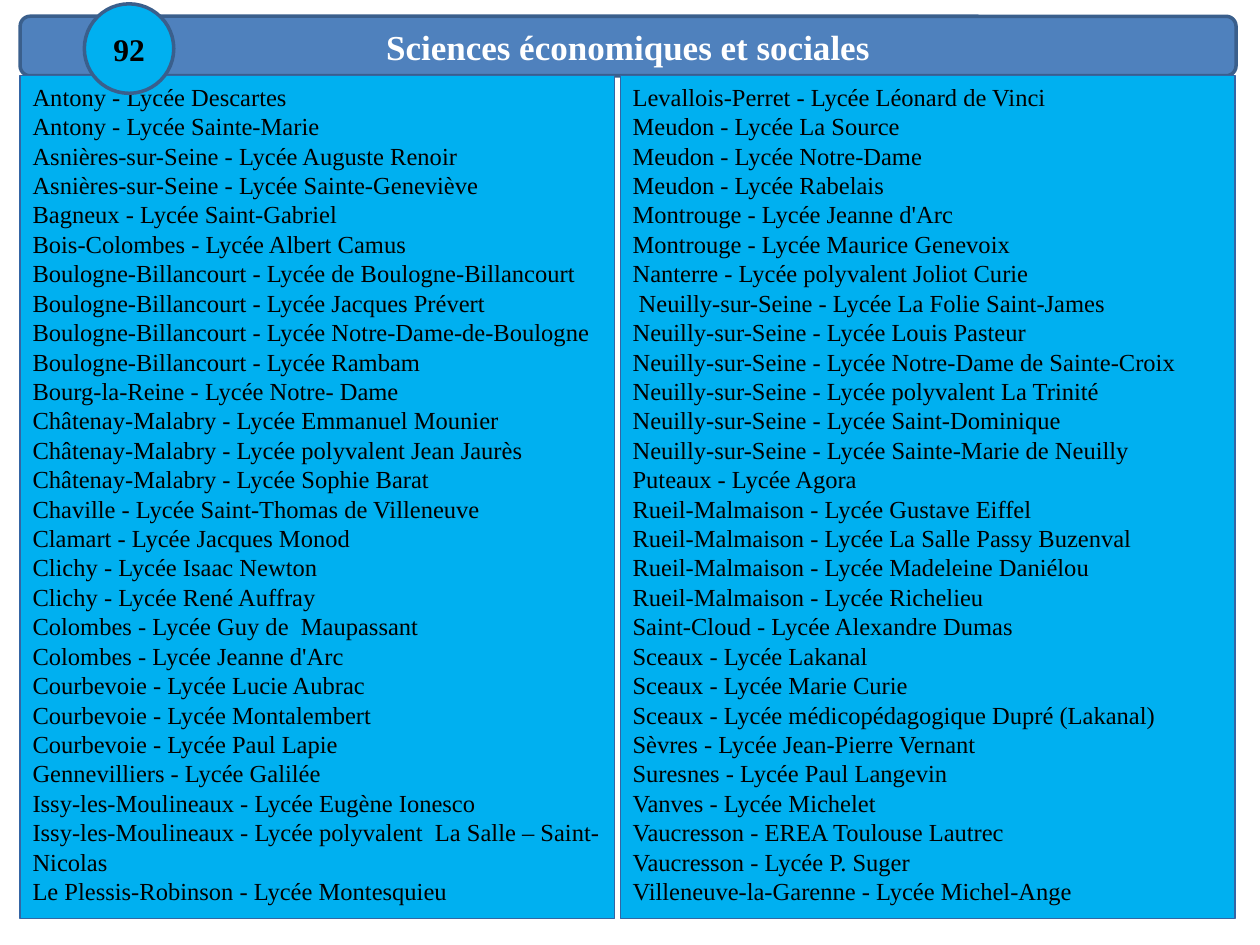
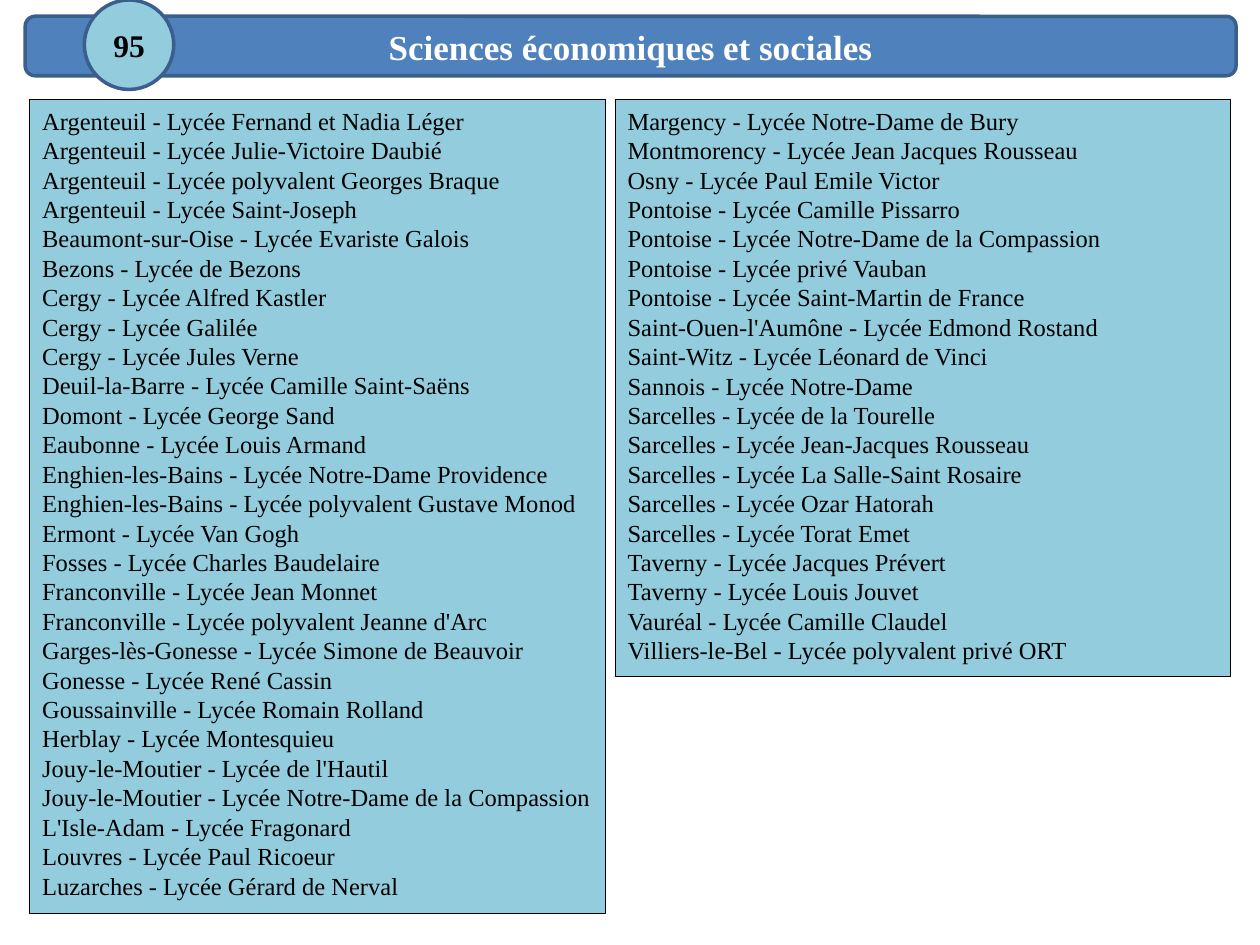
import pptx
import pptx.util
import pptx.dml.color
import pptx.enum.shapes
import pptx.enum.text
from dataclasses import dataclass

Pt = pptx.util.Pt
SHAPES = pptx.enum.shapes.MSO_SHAPE
ALIGN = pptx.enum.text.PP_ALIGN
ANCHOR = pptx.enum.text.MSO_ANCHOR


@dataclass(frozen=True)
class Theme:
    font: str = "Times New Roman"
    title_size: int = 20
    badge_size: int = 18
    list_size: int = 14
    white: str = "FFFFFF"
    black: str = "000000"
    band: str = "4F81BD"
    band_line: str = "3A5F8C"
    bright_blue: str = "00B0F0"
    bright_line: str = "3465A4"
    pale_blue: str = "93CDDD"


theme = Theme()
color = pptx.dml.color.RGBColor.from_string


def add_box(slide, kind, bounds, fill, line, line_width):
    shape = slide.shapes.add_shape(kind, *[Pt(length) for length in bounds])
    shape.shadow.inherit = False
    shape.fill.solid()
    shape.fill.fore_color.rgb = color(fill)
    shape.line.color.rgb = color(line)
    shape.line.width = Pt(line_width)
    return shape


def write_text(shape, lines, size, ink=theme.black, bold=False,
               align=ALIGN.CENTER, anchor=ANCHOR.MIDDLE):
    frame = shape.text_frame
    frame.word_wrap = True
    frame.vertical_anchor = anchor
    frame.text = "\n".join(lines)
    for paragraph in frame.paragraphs:
        paragraph.alignment = align
        paragraph.font.name = theme.font
        paragraph.font.size = Pt(size)
        paragraph.font.bold = bold
        paragraph.font.color.rgb = color(ink)


# Schools of each department, left and right columns
schools_92_left = [
    "Antony - Lycée Descartes",
    "Antony - Lycée Sainte-Marie",
    "Asnières-sur-Seine - Lycée Auguste Renoir",
    "Asnières-sur-Seine - Lycée Sainte-Geneviève",
    "Bagneux - Lycée Saint-Gabriel",
    "Bois-Colombes - Lycée Albert Camus",
    "Boulogne-Billancourt - Lycée de Boulogne-Billancourt",
    "Boulogne-Billancourt - Lycée Jacques Prévert",
    "Boulogne-Billancourt - Lycée Notre-Dame-de-Boulogne",
    "Boulogne-Billancourt - Lycée Rambam",
    "Bourg-la-Reine - Lycée Notre- Dame",
    "Châtenay-Malabry - Lycée Emmanuel Mounier",
    "Châtenay-Malabry - Lycée polyvalent Jean Jaurès",
    "Châtenay-Malabry - Lycée Sophie Barat",
    "Chaville - Lycée Saint-Thomas de Villeneuve",
    "Clamart - Lycée Jacques Monod",
    "Clichy - Lycée Isaac Newton",
    "Clichy - Lycée René Auffray",
    "Colombes - Lycée Guy de  Maupassant",
    "Colombes - Lycée Jeanne d'Arc",
    "Courbevoie - Lycée Lucie Aubrac",
    "Courbevoie - Lycée Montalembert",
    "Courbevoie - Lycée Paul Lapie",
    "Gennevilliers - Lycée Galilée",
    "Issy-les-Moulineaux - Lycée Eugène Ionesco",
    "Issy-les-Moulineaux - Lycée polyvalent  La Salle – Saint-Nicolas",
    "Le Plessis-Robinson - Lycée Montesquieu",
]

schools_92_right = [
    "Levallois-Perret - Lycée Léonard de Vinci",
    "Meudon - Lycée La Source",
    "Meudon - Lycée Notre-Dame",
    "Meudon - Lycée Rabelais",
    "Montrouge - Lycée Jeanne d'Arc",
    "Montrouge - Lycée Maurice Genevoix",
    "Nanterre - Lycée polyvalent Joliot Curie",
    " Neuilly-sur-Seine - Lycée La Folie Saint-James",
    "Neuilly-sur-Seine - Lycée Louis Pasteur",
    "Neuilly-sur-Seine - Lycée Notre-Dame de Sainte-Croix",
    "Neuilly-sur-Seine - Lycée polyvalent La Trinité",
    "Neuilly-sur-Seine - Lycée Saint-Dominique",
    "Neuilly-sur-Seine - Lycée Sainte-Marie de Neuilly",
    "Puteaux - Lycée Agora",
    "Rueil-Malmaison - Lycée Gustave Eiffel",
    "Rueil-Malmaison - Lycée La Salle Passy Buzenval",
    "Rueil-Malmaison - Lycée Madeleine Daniélou",
    "Rueil-Malmaison - Lycée Richelieu",
    "Saint-Cloud - Lycée Alexandre Dumas",
    "Sceaux - Lycée Lakanal",
    "Sceaux - Lycée Marie Curie",
    "Sceaux - Lycée médicopédagogique Dupré (Lakanal)",
    "Sèvres - Lycée Jean-Pierre Vernant",
    "Suresnes - Lycée Paul Langevin",
    "Vanves - Lycée Michelet",
    "Vaucresson - EREA Toulouse Lautrec",
    "Vaucresson - Lycée P. Suger",
    "Villeneuve-la-Garenne - Lycée Michel-Ange",
]

schools_95_left = [
    "Argenteuil - Lycée Fernand et Nadia Léger",
    "Argenteuil - Lycée Julie-Victoire Daubié",
    "Argenteuil - Lycée polyvalent Georges Braque",
    "Argenteuil - Lycée Saint-Joseph",
    "Beaumont-sur-Oise - Lycée Evariste Galois",
    "Bezons - Lycée de Bezons",
    "Cergy - Lycée Alfred Kastler",
    "Cergy - Lycée Galilée",
    "Cergy - Lycée Jules Verne",
    "Deuil-la-Barre - Lycée Camille Saint-Saëns",
    "Domont - Lycée George Sand",
    "Eaubonne - Lycée Louis Armand",
    "Enghien-les-Bains - Lycée Notre-Dame Providence",
    "Enghien-les-Bains - Lycée polyvalent Gustave Monod",
    "Ermont - Lycée Van Gogh",
    "Fosses - Lycée Charles Baudelaire",
    "Franconville - Lycée Jean Monnet",
    "Franconville - Lycée polyvalent Jeanne d'Arc",
    "Garges-lès-Gonesse - Lycée Simone de Beauvoir",
    "Gonesse - Lycée René Cassin",
    "Goussainville - Lycée Romain Rolland",
    "Herblay - Lycée Montesquieu",
    "Jouy-le-Moutier - Lycée de l'Hautil",
    "Jouy-le-Moutier - Lycée Notre-Dame de la Compassion",
    "L'Isle-Adam - Lycée Fragonard",
    "Louvres - Lycée Paul Ricoeur",
    "Luzarches - Lycée Gérard de Nerval",
]

schools_95_right = [
    "Margency - Lycée Notre-Dame de Bury",
    "Montmorency - Lycée Jean Jacques Rousseau",
    "Osny - Lycée Paul Emile Victor",
    "Pontoise - Lycée Camille Pissarro",
    "Pontoise - Lycée Notre-Dame de la Compassion",
    "Pontoise - Lycée privé Vauban",
    "Pontoise - Lycée Saint-Martin de France",
    "Saint-Ouen-l'Aumône - Lycée Edmond Rostand",
    "Saint-Witz - Lycée Léonard de Vinci",
    "Sannois - Lycée Notre-Dame",
    "Sarcelles - Lycée de la Tourelle",
    "Sarcelles - Lycée Jean-Jacques Rousseau",
    "Sarcelles - Lycée La Salle-Saint Rosaire",
    "Sarcelles - Lycée Ozar Hatorah",
    "Sarcelles - Lycée Torat Emet",
    "Taverny - Lycée Jacques Prévert",
    "Taverny - Lycée Louis Jouvet",
    "Vauréal - Lycée Camille Claudel",
    "Villiers-le-Bel - Lycée polyvalent privé ORT",
]

# Each department: colours, positions, and columns as (bounds, schools)
departments = [
    dict(number="92", fill=theme.bright_blue, line=theme.bright_line, line_width=0.75,
         band_left=11.5, badge_top=2.2,
         columns=[((11.5, 43.2, 339.8, 481.7), schools_92_left),
                  ((354.4, 43.2, 351.4, 481.7), schools_92_right)]),
    dict(number="95", fill=theme.pale_blue, line=theme.black, line_width=0.25,
         band_left=14.4, badge_top=0,
         columns=[((17, 56.9, 329, 465), schools_95_left),
                  ((351.5, 56.9, 351.4, 329.8), schools_95_right)]),
]
band_right = 706.3
badge_diameter = 51.1

presentation = pptx.Presentation()
presentation.slide_width = Pt(720)
presentation.slide_height = Pt(540)

for department in departments:
    slide = presentation.slides.add_slide(presentation.slide_layouts[6])

    # Title band
    left = department["band_left"]
    band = add_box(slide, SHAPES.ROUNDED_RECTANGLE, (left, 9.3, band_right - left, 34),
                   theme.band, theme.band_line, 2)
    write_text(band, ["Sciences économiques et sociales"], theme.title_size,
               ink=theme.white, bold=True)

    # School columns
    for bounds, schools in department["columns"]:
        column = add_box(slide, SHAPES.RECTANGLE, bounds, department["fill"],
                         department["line"], department["line_width"])
        write_text(column, schools, theme.list_size, align=ALIGN.LEFT, anchor=ANCHOR.TOP)

    # Department number badge, over the band and the left column
    badge = add_box(slide, SHAPES.OVAL,
                    (48.2, department["badge_top"], badge_diameter, badge_diameter),
                    department["fill"], theme.band_line, 2)
    write_text(badge, [department["number"]], theme.badge_size, bold=True)

presentation.save("out.pptx")
